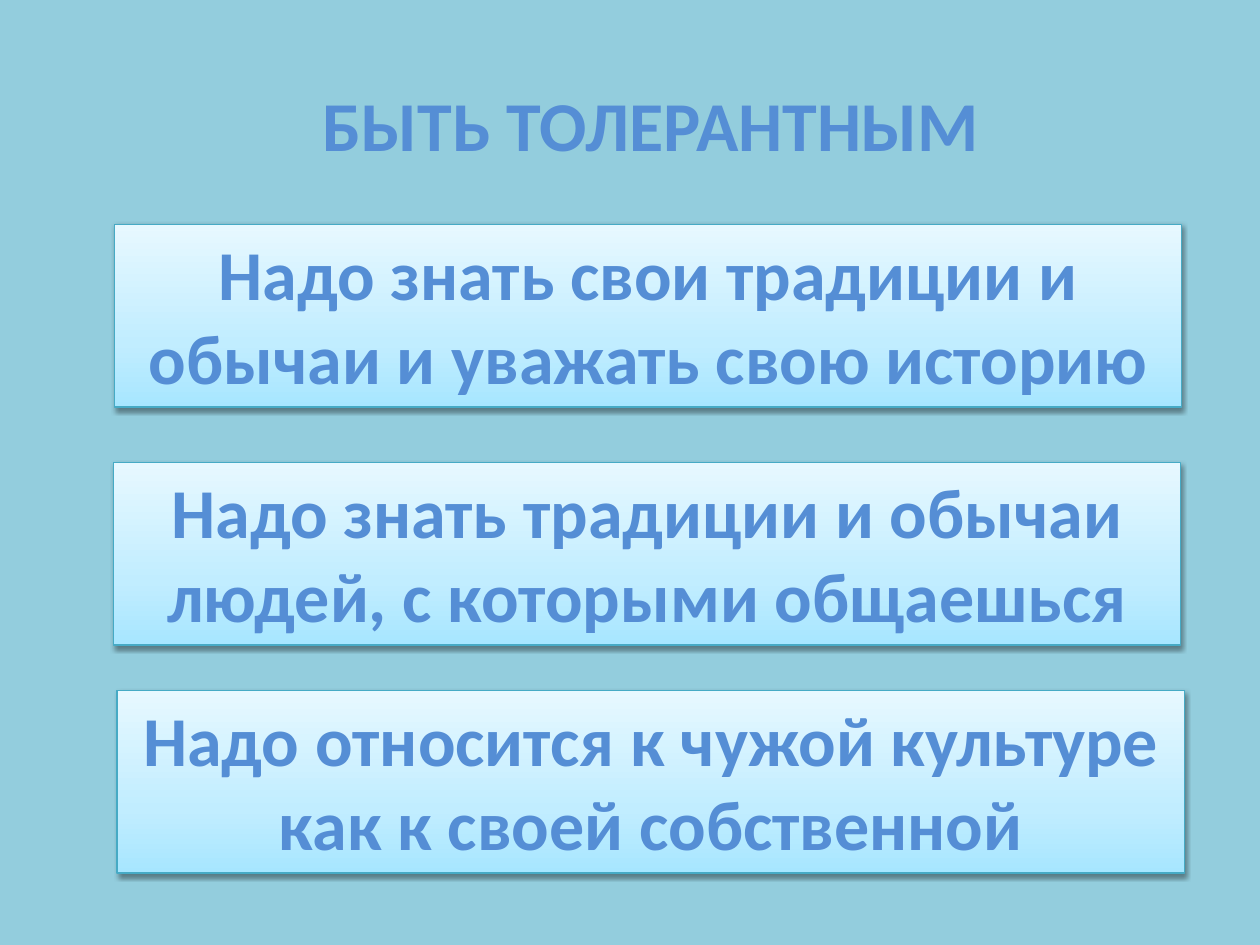
from copy import deepcopy

from lxml.etree import SubElement
from pptx import Presentation
from pptx.dml.color import RGBColor
from pptx.enum.shapes import MSO_SHAPE
from pptx.enum.text import MSO_ANCHOR, MSO_AUTO_SIZE, PP_ALIGN
from pptx.oxml import parse_xml
from pptx.oxml.ns import nsdecls, qn
from pptx.util import Inches, Pt

COLORS = {
    "background": "93CDDD",
    "text": "558ED5",
    "text_outline": "054697",
    "border": "46AAC5",
    "shadow": "000000",
}
CARD_GRADIENT = [(0, "A7E6FF"), (0.35, "C1EDFF"), (1, "E7F8FF")]
WIDTH, HEIGHT = Inches(10), Inches(7.5)
BLOCK_WIDTH = 0.847
CARD_HEIGHT = 1.45 / 7.5

TITLE = "БЫТЬ ТОЛЕРАНТНЫМ"
CARDS = [
    (0.091, 1.78 / 7.5, "Надо знать свои традиции и обычаи и уважать свою историю"),
    (0.09, 3.67 / 7.5, "Надо знать традиции и обычаи людей, с которыми общаешься"),
    (0.093, 5.48 / 7.5, "Надо относится к чужой культуре как к своей собственной"),
]


class SlideBuilder:
    """Places elements by shares of the slide's width and height."""

    font_name = "Calibri"
    font_size = Pt(40)

    def __init__(self, prs):
        self.s = prs.slides.add_slide(prs.slide_layouts[6])
        fill = self.s.background.fill
        fill.solid()
        fill.fore_color.rgb = RGBColor.from_string(COLORS["background"])

    def box(self, x, y, w, h):
        return int(x * WIDTH), int(y * HEIGHT), int(w * WIDTH), int(h * HEIGHT)

    def set_text(self, sp, text):
        tf = sp.text_frame
        tf.word_wrap = True
        tf.auto_size = MSO_AUTO_SIZE.SHAPE_TO_FIT_TEXT
        tf.vertical_anchor = MSO_ANCHOR.TOP
        p = tf.paragraphs[0]
        p.alignment = PP_ALIGN.CENTER
        p.text = text
        font = p.font
        font.name, font.size, font.bold = self.font_name, self.font_size, True
        font.color.rgb = RGBColor.from_string(COLORS["text"])
        p._p.pPr.find(qn("a:defRPr")).insert(0, parse_xml(
            f'<a:ln {nsdecls("a")} w="{Pt(1)}"><a:solidFill>'
            f'<a:srgbClr val="{COLORS["text_outline"]}"/></a:solidFill></a:ln>'))

    def title(self, x, y, w, h, text):
        self.set_text(self.s.shapes.add_textbox(*self.box(x, y, w, h)), text)

    def card(self, x, y, w, h, text):
        sp = self.s.shapes.add_shape(MSO_SHAPE.RECTANGLE, *self.box(x, y, w, h))
        self.gradient(sp)
        sp.line.color.rgb = RGBColor.from_string(COLORS["border"])
        sp.line.width = Pt(0.75)
        self.shadow(sp)
        self.set_text(sp, text)

    def gradient(self, sp):
        sp.fill.gradient()
        sp.fill.gradient_angle = 90
        stops = sp._element.spPr.find(qn("a:gradFill")).find(qn("a:gsLst"))
        while len(stops) < len(CARD_GRADIENT):
            stops.append(deepcopy(stops[0]))
        for stop, (position, color) in zip(sp.fill.gradient_stops, CARD_GRADIENT):
            stop.position = position
            stop.color.rgb = RGBColor.from_string(color)

    def shadow(self, sp):
        sp.shadow.inherit = False
        effects = sp._element.spPr.find(qn("a:effectLst"))
        outer = SubElement(effects, qn("a:outerShdw"), blurRad=str(Pt(3.1)),
                           dist=str(Pt(1.6)), dir="5400000", rotWithShape="0")
        color = SubElement(outer, qn("a:srgbClr"), val=COLORS["shadow"])
        SubElement(color, qn("a:alpha"), val="38000")


def main():
    prs = Presentation()
    prs.slide_width, prs.slide_height = WIDTH, HEIGHT
    slide = SlideBuilder(prs)
    slide.title(0.093, 0.08, BLOCK_WIDTH, 0.77 / 7.5, TITLE)
    for x, y, text in CARDS:
        slide.card(x, y, BLOCK_WIDTH, CARD_HEIGHT, text)
    prs.save("out.pptx")


if __name__ == "__main__":
    main()
